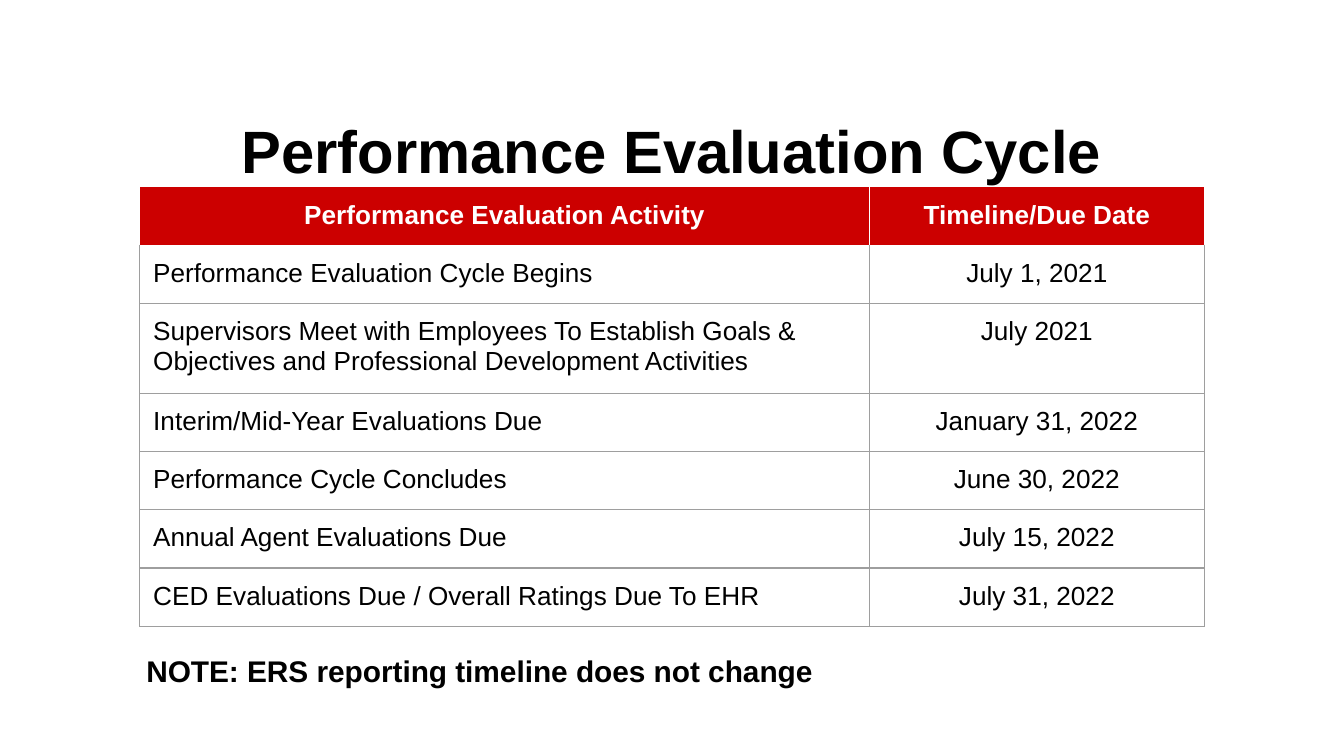
from lxml import etree
from pptx import Presentation
from pptx import util as u
from pptx.dml.color import RGBColor
from pptx.enum import text
from pptx.oxml.ns import qn

BLACK = RGBColor(0x00, 0x00, 0x00)
WHITE = RGBColor(0xFF, 0xFF, 0xFF)
RED = RGBColor(0xCC, 0x00, 0x00)
GREY = RGBColor(0x9E, 0x9E, 0x9E)

ROWS = [
    ("Performance Evaluation Activity", "Timeline/Due Date"),
    ("Performance Evaluation Cycle Begins", "July 1, 2021"),
    ("Supervisors Meet with Employees To Establish Goals & "
     "Objectives and Professional Development Activities", "July 2021"),
    ("Interim/Mid-Year Evaluations Due", "January 31, 2022"),
    ("Performance Cycle Concludes", "June 30, 2022"),
    ("Annual Agent Evaluations Due", "July 15, 2022"),
    ("CED Evaluations Due / Overall Ratings Due To EHR", "July 31, 2022"),
]
ROW_HEIGHTS = [0.42, 0.42, 0.64, 0.42, 0.42, 0.42, 0.42]


def write(text_frame, words, size, color, bold, alignment):
    text_frame.text = words
    text_frame.word_wrap = True
    paragraph = text_frame.paragraphs[0]
    paragraph.alignment = alignment
    font = paragraph.runs[0].font
    font.name, font.size, font.bold = "Arial", u.Pt(size), bold
    font.color.rgb = color


def add_border(cell, side, color):
    line = etree.SubElement(cell._tc.get_or_add_tcPr(), qn(f"a:ln{side}"),
                            w=str(u.Pt(0.75)))
    fill = etree.SubElement(line, qn("a:solidFill"))
    etree.SubElement(fill, qn("a:srgbClr"), val=str(color))


# Widescreen 16:9 slide
presentation = Presentation()
presentation.slide_width = u.Inches(10)
presentation.slide_height = u.Inches(10 * 9 / 16)
slide = presentation.slides.add_slide(presentation.slide_layouts[6])

# Title
title = slide.shapes.add_textbox(u.Inches(0.5), u.Inches(0.76), u.Inches(9), u.Inches(0.71))
title.text_frame.vertical_anchor = text.MSO_ANCHOR.MIDDLE
write(title.text_frame, "Performance Evaluation Cycle", 32, BLACK, True, text.PP_ALIGN.CENTER)

# Timeline table
table = slide.shapes.add_table(len(ROWS), 2, u.Inches(1.04), u.Inches(1.39),
                               u.Inches(7.92), u.Inches(sum(ROW_HEIGHTS))).table
table.horz_banding = False
table.columns[0].width = u.Inches(5.43)
table.columns[1].width = u.Inches(2.49)

for row, (entries, height) in enumerate(zip(ROWS, ROW_HEIGHTS)):
    table.rows[row].height = u.Inches(height)
    header = row == 0
    for column, words in enumerate(entries):
        cell = table.cell(row, column)
        cell.margin_left = cell.margin_right = u.Inches(0.1)
        cell.margin_top = cell.margin_bottom = u.Inches(0.1)
        centred = header or column == 1
        write(cell.text_frame, words, 14, WHITE if header else BLACK, header,
              text.PP_ALIGN.CENTER if centred else text.PP_ALIGN.LEFT)
        for side in "LRTB":
            white_edge = header or (row == 1 and side == "T")
            add_border(cell, side, WHITE if white_edge else GREY)
        if header:
            cell.fill.solid()
            cell.fill.fore_color.rgb = RED
        else:
            cell.fill.background()

# Note below the table
note = slide.shapes.add_textbox(u.Inches(0.99), u.Inches(4.76), u.Inches(7.92), u.Inches(0.47))
note.text_frame.margin_top = note.text_frame.margin_bottom = u.Inches(0.1)
note.text_frame.auto_size = text.MSO_AUTO_SIZE.SHAPE_TO_FIT_TEXT
write(note.text_frame, "NOTE: ERS reporting timeline does not change", 16, BLACK, True,
      text.PP_ALIGN.LEFT)

presentation.save("out.pptx")
